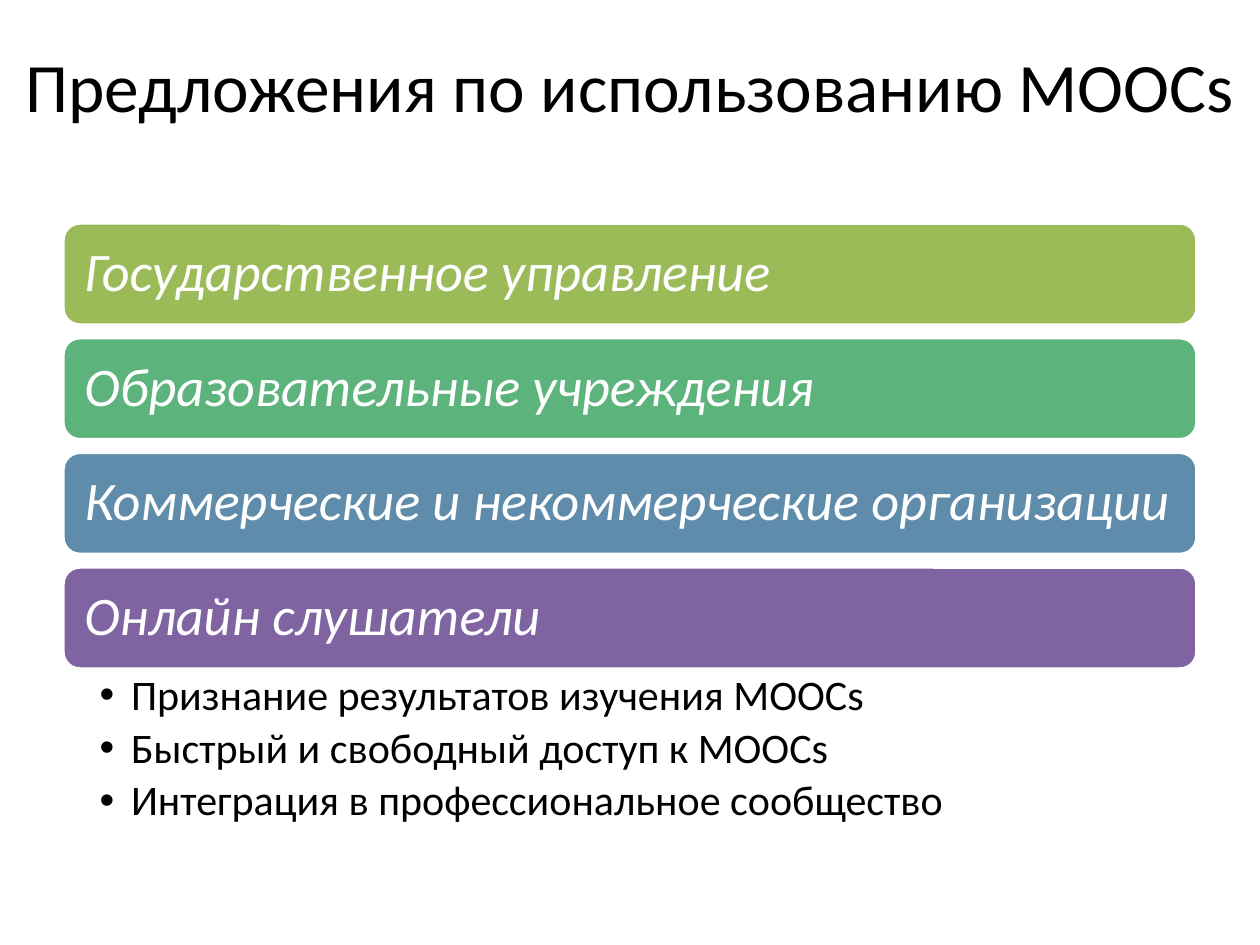
from lxml.etree import SubElement
from pptx import Presentation
from pptx.dml.color import RGBColor
from pptx.enum.shapes import MSO_SHAPE
from pptx.enum.text import MSO_ANCHOR, MSO_AUTO_SIZE, PP_ALIGN
from pptx.oxml.ns import qn
from pptx.util import Inches, Pt

TITLE = "Предложения по использованию MOOCs"
AUDIENCES = [
    ("Государственное управление", "green"),
    ("Образовательные учреждения", "teal"),
    ("Коммерческие и некоммерческие организации", "blue"),
    ("Онлайн слушатели", "purple"),
]
LEARNER_PROPOSALS = [
    "Признание результатов изучения MOOCs",
    "Быстрый и свободный доступ к MOOCs",
    "Интеграция в профессиональное сообщество",
]
COLORS = {
    "green": "9BBB59",
    "teal": "5CB37C",
    "blue": "608CAB",
    "purple": "8064A2",
    "white": "FFFFFF",
    "black": "000000",
}
FONT = "Calibri"
LEFT, WIDTH = 0.5, 9
BAR_TOP, BAR_HEIGHT, BAR_STEP = 1.77, 0.81, 0.91


def rgb(name):
    return RGBColor.from_string(COLORS[name])


def write(paragraph, text, size, color, italic=False):
    run = paragraph.add_run()
    run.text = text
    run.font.name = FONT
    run.font.size = Pt(size)
    run.font.italic = italic
    run.font.color.rgb = rgb(color)


def set_margins(frame, left, top, right, bottom):
    frame.margin_left, frame.margin_top = Inches(left), Inches(top)
    frame.margin_right, frame.margin_bottom = Inches(right), Inches(bottom)


def add_bullet(paragraph):
    properties = paragraph._p.get_or_add_pPr()
    properties.set("marL", str(Inches(0.25)))
    properties.set("indent", str(-Inches(0.25)))
    SubElement(properties, qn("a:buFont"), typeface="Arial")
    SubElement(properties, qn("a:buChar"), char="•")


def add_bar(slide, index, audience, color):
    bar = slide.shapes.add_shape(
        MSO_SHAPE.ROUNDED_RECTANGLE,
        Inches(LEFT), Inches(BAR_TOP + index * BAR_STEP),
        Inches(WIDTH), Inches(BAR_HEIGHT),
    )
    bar.shadow.inherit = False
    bar.fill.solid()
    bar.fill.fore_color.rgb = rgb(color)
    bar.line.color.rgb = rgb("white")
    bar.line.width = Pt(2)
    frame = bar.text_frame
    frame.word_wrap = True
    frame.vertical_anchor = MSO_ANCHOR.MIDDLE
    set_margins(frame, 0.13, 0.13, 0.13, 0.13)
    paragraph = frame.paragraphs[0]
    paragraph.alignment = PP_ALIGN.LEFT
    paragraph.line_spacing = 0.9
    write(paragraph, audience, 31, "white", italic=True)


def add_proposals(slide):
    top = BAR_TOP + (len(AUDIENCES) - 1) * BAR_STEP + BAR_HEIGHT
    proposals = slide.shapes.add_textbox(
        Inches(LEFT), Inches(top), Inches(WIDTH), Inches(1.37)
    )
    frame = proposals.text_frame
    frame.word_wrap = True
    set_margins(frame, 0.29, 0.04, 0.24, 0.04)
    for index, proposal in enumerate(LEARNER_PROPOSALS):
        paragraph = frame.add_paragraph() if index else frame.paragraphs[0]
        paragraph.line_spacing = 0.9
        paragraph.space_after = Pt(4.2)
        add_bullet(paragraph)
        write(paragraph, proposal, 24, "black")


def main():
    presentation = Presentation()
    presentation.slide_width, presentation.slide_height = Inches(10), Inches(7.5)
    slide = presentation.slides.add_slide(presentation.slide_layouts[5])

    title = slide.shapes.title
    title.left, title.top = Inches(0), Inches(0.05)
    title.width, title.height = Inches(10), Inches(1.25)
    title.text_frame.auto_size = MSO_AUTO_SIZE.NONE
    title.text_frame.vertical_anchor = MSO_ANCHOR.MIDDLE
    heading = title.text_frame.paragraphs[0]
    heading.alignment = PP_ALIGN.CENTER
    write(heading, TITLE, 39.6, "black")

    for index, (audience, color) in enumerate(AUDIENCES):
        add_bar(slide, index, audience, color)
    add_proposals(slide)
    presentation.save("out.pptx")


if __name__ == "__main__":
    main()
